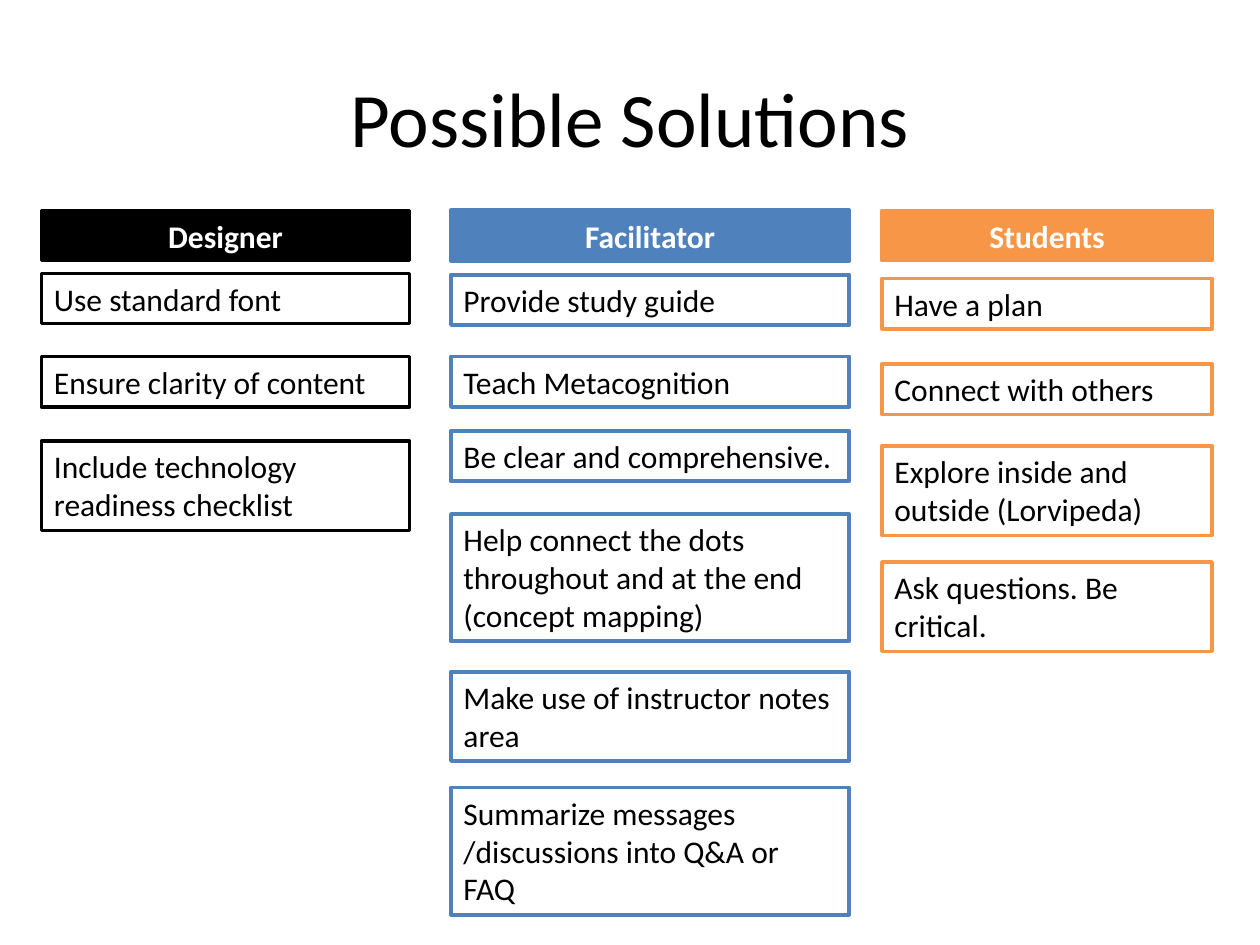
from pptx import Presentation
from pptx.dml.color import RGBColor
from pptx.enum.shapes import MSO_SHAPE
from pptx.enum.text import MSO_ANCHOR, MSO_AUTO_SIZE, PP_ALIGN
from pptx.util import Inches, Pt

BLACK = RGBColor(0x00, 0x00, 0x00)
WHITE = RGBColor(0xFF, 0xFF, 0xFF)
BLUE = RGBColor(0x4F, 0x81, 0xBD)
ORANGE = RGBColor(0xF7, 0x96, 0x46)

FONT = "Calibri"
HEADER_TOP = 1.67
HEIGHT_BY_LINES = {1: 0.4, 2: 0.71, 3: 1.01}

ROLES = [
    {
        "name": "Designer", "left": 0.33, "width": 2.92,
        "color": BLACK, "line": 2, "fill": WHITE,
        "solutions": [
            (2.17, 1, "Use standard font"),
            (2.83, 1, "Ensure clarity of content"),
            (3.5, 2, "Include technology readiness checklist"),
        ],
    },
    {
        "name": "Facilitator", "left": 3.58, "width": 3.16,
        "color": BLUE, "line": 2.25, "fill": None,
        "solutions": [
            (2.18, 1, "Provide study guide"),
            (2.83, 1, "Teach Metacognition"),
            (3.42, 1, "Be clear and comprehensive."),
            (4.08, 3, "Help connect the dots throughout and at the end (concept mapping)"),
            (5.33, 2, "Make use of instructor notes area"),
            (6.25, 3, "Summarize messages /discussions into Q&A or FAQ"),
        ],
    },
    {
        "name": "Students", "left": 7, "width": 2.62,
        "color": ORANGE, "line": 2, "fill": WHITE,
        "solutions": [
            (2.21, 1, "Have a plan"),
            (2.89, 1, "Connect with others"),
            (3.54, 2, "Explore inside and outside (Lorvipeda)"),
            (4.46, 2, "Ask questions. Be critical."),
        ],
    },
]


def format_paragraph(para, size, color, align, bold=False):
    """Set the font and alignment of one paragraph."""
    para.alignment = align
    para.font.name = FONT
    para.font.size = Pt(size)
    para.font.bold = bold
    para.font.color.rgb = color


def add_title(page, text):
    """Fill and place the title placeholder."""
    title = page.shapes.title
    title.left, title.top = Inches(0.5), Inches(0.3)
    title.width, title.height = Inches(9), Inches(1.25)
    title.text_frame.text = text
    title.text_frame.vertical_anchor = MSO_ANCHOR.MIDDLE
    format_paragraph(title.text_frame.paragraphs[0], 44, BLACK, PP_ALIGN.CENTER)


def add_box(page, role, top, lines, text, fill):
    """Add an outlined box in the role's column and return its paragraph."""
    box = page.shapes.add_shape(
        MSO_SHAPE.RECTANGLE, Inches(role["left"]), Inches(top),
        Inches(role["width"]), Inches(HEIGHT_BY_LINES[lines]))
    box.shadow.inherit = False
    if fill is None:
        box.fill.background()
    else:
        box.fill.solid()
        box.fill.fore_color.rgb = fill
    box.line.color.rgb = role["color"]
    box.line.width = Pt(role["line"])
    frame = box.text_frame
    frame.word_wrap = True
    frame.auto_size = MSO_AUTO_SIZE.SHAPE_TO_FIT_TEXT
    frame.vertical_anchor = MSO_ANCHOR.TOP
    frame.text = text
    return frame.paragraphs[0]


def add_role(page, role):
    """Add a column with its header and solutions."""
    header = add_box(page, role, HEADER_TOP, 1, role["name"], role["color"])
    format_paragraph(header, 18, WHITE, PP_ALIGN.CENTER, bold=True)
    for top, lines, text in role["solutions"]:
        para = add_box(page, role, top, lines, text, role["fill"])
        format_paragraph(para, 18, BLACK, PP_ALIGN.LEFT)


def main():
    """Build and save the slide."""
    deck = Presentation()
    deck.slide_width, deck.slide_height = Inches(10), Inches(7.5)
    page = deck.slides.add_slide(deck.slide_layouts[5])
    add_title(page, "Possible Solutions")
    for role in ROLES:
        add_role(page, role)
    deck.save("out.pptx")


if __name__ == "__main__":
    main()
